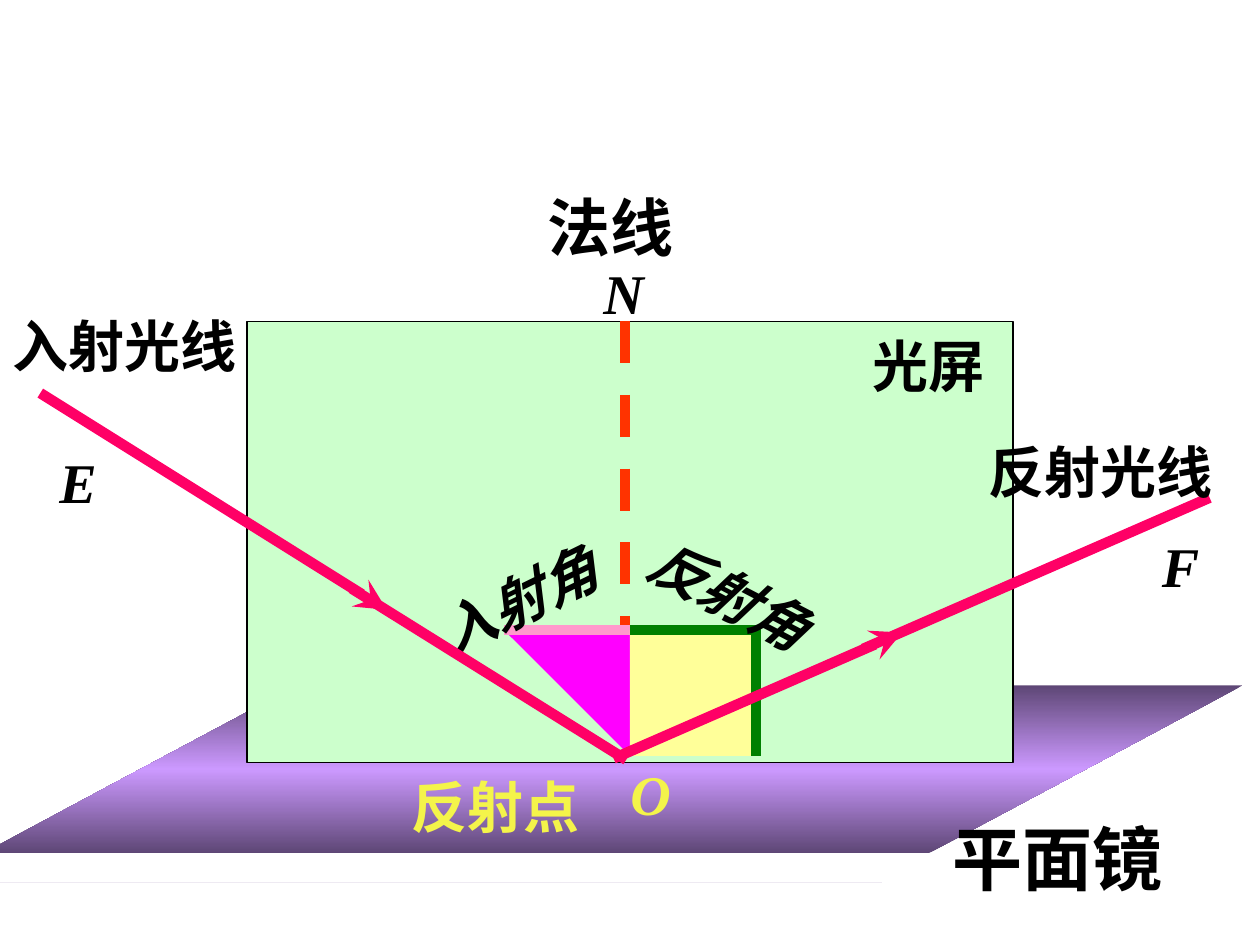
from dataclasses import dataclass

from lxml.etree import SubElement
from pptx import Presentation
from pptx.dml.color import RGBColor
from pptx.enum.dml import MSO_LINE
from pptx.enum.shapes import MSO_CONNECTOR, MSO_SHAPE
from pptx.enum.text import MSO_AUTO_SIZE, PP_ALIGN
from pptx.oxml import parse_xml
from pptx.oxml.ns import nsdecls, qn
from pptx.shapes.autoshape import Shape
from pptx.shapes.connector import Connector
from pptx.slide import Slide
from pptx.util import Inches, Pt

Point = tuple[float, float]


@dataclass(frozen=True)
class Theme:
    """Colours, type sizes and line widths of the slide."""

    font: str = "Times New Roman"
    text: str = "000000"
    point_text: str = "F4F44A"
    screen: str = "CCFFCC"
    mirror_light: str = "CC99FF"
    mirror_dark: str = "5E4776"
    mirror_edge: str = "7B5C99"
    normal: str = "FF3300"
    ray: str = "FF0066"
    label_size: int = 32
    normal_size: int = 36
    mirror_size: int = 40
    thin: float = 0.75
    thick: float = 6


THEME = Theme()


@dataclass(frozen=True)
class Label:
    """A line of bold text in a box."""

    text: str
    left: float
    top: float
    width: float
    height: float = 0.63
    size: int = THEME.label_size
    color: str = THEME.text
    italic: bool = False
    centered: bool = False
    rotation: float = 0


@dataclass(frozen=True)
class Segment:
    """A straight stroke with an optional arrowhead."""

    start: Point
    end: Point
    color: str = THEME.ray
    arrow: bool = False
    dashed: bool = False


@dataclass(frozen=True)
class Angle:
    """A sector with an outlined curved edge made of Bezier spans."""

    apex: Point
    start: Point
    spans: tuple[tuple[Point, Point, Point], ...]
    fill: str
    line: str


SEGMENTS = (
    Segment((0.32, 3.12), (3.07, 4.84), arrow=True),
    Segment((2.79, 4.67), (4.97, 6.03)),
    Segment((4.87, 6.02), (7.16, 5.02), arrow=True),
    Segment((6.85, 5.15), (9.6, 3.95)),
)
NORMAL = Segment((4.96, 2.55), (4.96, 6.05), THEME.normal, dashed=True)
INCIDENCE = Angle(
    (4.92, 5.97), (4.95, 4.8),
    (((4.92, 4.8), (4.88, 4.8), (4.84, 4.8)), ((4.42, 4.83), (4.04, 5.05), (3.83, 5.4))),
    "FF00FF", "FF99CC",
)
REFLECTION = Angle(
    (4.92, 5.92), (4.92, 4.75), (((5.39, 4.75), (5.81, 5.09), (5.95, 5.58)),),
    "FFFF99", "008000",
)
INCIDENCE_LABEL = Label("入射角", 3.33, 4.42, 1.68, italic=True, rotation=333.9)
REFLECTION_LABEL = Label("反射角", 5, 4.5, 1.97, italic=True, rotation=27.5)
LABELS = (
    Label("N", 4.58, 2, 0.74, italic=True, centered=True),
    Label("入射光线", 0, 2.42, 2.37),
    Label("反射光线", 7.75, 3.42, 2.06),
    Label("平面镜", 7.46, 6.42, 2.54, 0.77, THEME.mirror_size),
    Label("法线", 4.25, 1.45, 1.87, 0.7, THEME.normal_size),
    Label("光屏", 6.83, 2.58, 1.16),
    Label("O", 4.83, 5.98, 0.67, color=THEME.point_text, italic=True, centered=True),
    Label("反射点", 3.17, 6.08, 1.75, color=THEME.point_text),
    Label("E", 0.25, 3.5, 0.74, italic=True, centered=True),
    Label("F", 9, 4.17, 0.74, italic=True, centered=True),
)


def rgb(color: str) -> RGBColor:
    """Return a colour object for a hex value."""
    return RGBColor.from_string(color)


def style(shape: Shape, fill: str | None, line: str | None, width: float = THEME.thin) -> None:
    """Set fill and line, and remove the shadow."""
    shape.shadow.inherit = False
    for target, color in ((shape.fill, fill), (shape.line.fill, line)):
        if color is None:
            target.background()
        else:
            target.solid()
            target.fore_color.rgb = rgb(color)
    if line is not None:
        shape.line.width = Pt(width)


def add_outline(slide: Slide, points: list[Point], closed: bool) -> Shape:
    """Draw a polygon or polyline through points in inches."""
    builder = slide.shapes.build_freeform(*points[0], scale=Inches(1))
    builder.add_line_segments(points[1:], close=closed)
    return builder.convert_to_shape()


def bezier(start: Point, span: tuple[Point, Point, Point], steps: int = 16) -> list[Point]:
    """Return points along a cubic curve, leaving out its start."""
    controls = (start, *span)
    curve = []
    for step in range(1, steps + 1):
        t = step / steps
        weights = ((1 - t) ** 3, 3 * t * (1 - t) ** 2, 3 * t**2 * (1 - t), t**3)
        x, y = (sum(w * p[axis] for w, p in zip(weights, controls)) for axis in (0, 1))
        curve.append((x, y))
    return curve


def add_angle(slide: Slide, angle: Angle) -> None:
    """Draw a filled sector and the stroke along its arc."""
    arc = [angle.start]
    for span in angle.spans:
        arc += bezier(arc[-1], span)
    style(add_outline(slide, [*arc, angle.apex], True), angle.fill, None)
    style(add_outline(slide, arc, False), None, angle.line, THEME.thick)


def add_segment(slide: Slide, segment: Segment) -> Connector:
    """Draw a thick straight stroke."""
    ends = (Inches(value) for value in (*segment.start, *segment.end))
    connector = slide.shapes.add_connector(MSO_CONNECTOR.STRAIGHT, *ends)
    connector.line.color.rgb = rgb(segment.color)
    connector.line.width = Pt(THEME.thick)
    if segment.dashed:
        connector.line.dash_style = MSO_LINE.DASH
    if segment.arrow:
        SubElement(connector.line._get_or_add_ln(), qn("a:tailEnd"), type="stealth")
    SubElement(connector._element.spPr, qn("a:effectLst"))
    return connector


def add_label(slide: Slide, label: Label) -> None:
    """Write a label in its box."""
    frame = (Inches(v) for v in (label.left, label.top, label.width, label.height))
    box = slide.shapes.add_textbox(*frame)
    box.rotation = label.rotation
    box.text_frame.word_wrap = True
    box.text_frame.auto_size = MSO_AUTO_SIZE.SHAPE_TO_FIT_TEXT
    box.text_frame.text = label.text
    paragraph = box.text_frame.paragraphs[0]
    paragraph.alignment = PP_ALIGN.CENTER if label.centered else PP_ALIGN.LEFT
    font = paragraph.runs[0].font
    font.name, font.size, font.bold, font.italic = THEME.font, Pt(label.size), True, label.italic
    font.color.rgb = rgb(label.color)


def add_mirror(slide: Slide) -> None:
    """Draw the mirror's front edge and its shaded surface."""
    edge = add_outline(slide, [(-0.13, 6.77), (0.26, 6.89), (7.18, 6.89), (7.4, 6.77)], True)
    style(edge, THEME.mirror_edge, None)
    surface = slide.shapes.add_shape(
        MSO_SHAPE.PARALLELOGRAM, Inches(-0.13), Inches(5.44), Inches(9.99), Inches(1.33))
    surface.adjustments[0] = 1.87
    style(surface, None, None)
    colors = (THEME.mirror_dark, THEME.mirror_light, THEME.mirror_dark)
    stops = "".join(f'<a:gs pos="{index * 50000}"><a:srgbClr val="{color}"/></a:gs>'
                    for index, color in enumerate(colors))
    gradient = parse_xml(f'<a:gradFill {nsdecls("a")} rotWithShape="1"><a:gsLst>{stops}</a:gsLst>'
                         '<a:lin ang="5400000" scaled="0"/></a:gradFill>')
    properties = surface._element.spPr
    properties.replace(properties.find(qn("a:noFill")), gradient)


def main() -> None:
    """Build the slide on the law of reflection."""
    presentation = Presentation()
    presentation.slide_width, presentation.slide_height = Inches(10), Inches(7.5)
    slide = presentation.slides.add_slide(presentation.slide_layouts[6])
    add_mirror(slide)
    screen = slide.shapes.add_shape(
        MSO_SHAPE.RECTANGLE, Inches(1.96), Inches(2.55), Inches(6.08), Inches(3.5))
    style(screen, THEME.screen, THEME.text)
    add_segment(slide, NORMAL)
    for angle, label in ((INCIDENCE, INCIDENCE_LABEL), (REFLECTION, REFLECTION_LABEL)):
        add_angle(slide, angle)
        add_label(slide, label)
    for segment in SEGMENTS:
        add_segment(slide, segment)
    for label in LABELS:
        add_label(slide, label)
    presentation.save("out.pptx")


if __name__ == "__main__":
    main()
